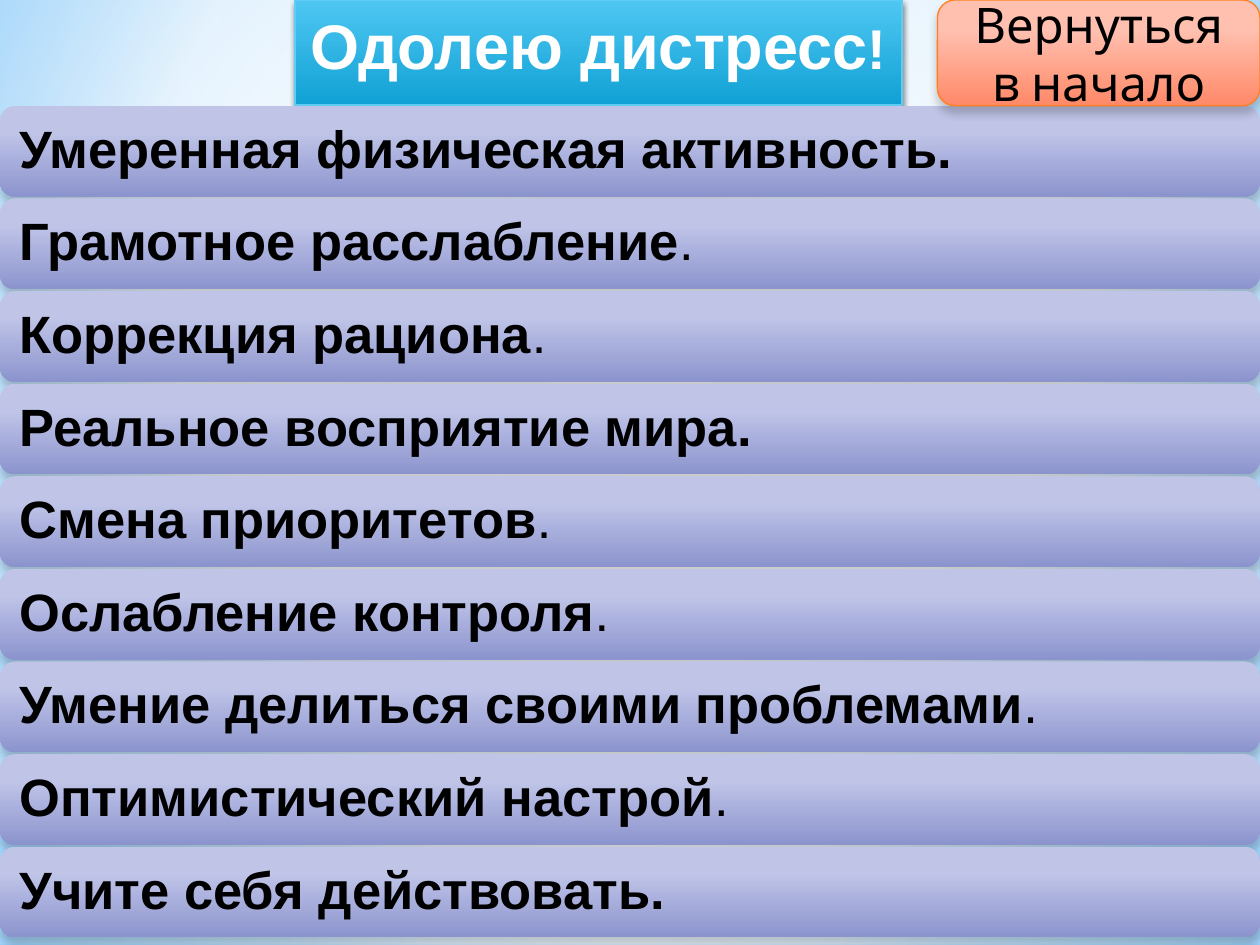
from dataclasses import dataclass
from typing import Optional

from lxml.etree import SubElement
from pptx import Presentation
from pptx.dml.color import RGBColor
from pptx.enum.shapes import MSO_SHAPE as Shape
from pptx.enum.text import MSO_ANCHOR as Anchor, MSO_AUTO_SIZE as AutoSize, PP_ALIGN as Align
from pptx.oxml import parse_xml
from pptx.oxml.ns import nsdecls, qn
from pptx.util import Inches, Pt


@dataclass(frozen=True)
class Stop:
    position: int
    color: str
    opacity: int = 100


@dataclass(frozen=True)
class Gradient:
    """Stops run downwards, or around the focus (left, top, right, bottom percent)."""
    stops: tuple[Stop, ...]
    focus: Optional[tuple[int, int, int, int]] = None


@dataclass(frozen=True)
class Shadow:
    opacity: int
    blur: float
    distance: float


@dataclass(frozen=True)
class Box:
    left: float
    top: float
    width: float
    height: float


@dataclass(frozen=True)
class Panel:
    kind: Shape
    box: Box
    gradient: Gradient


CENTER = (50, 50, 50, 50)
WHITE, PALE = "FFFFFF", "B4DCFA"
SKY = Gradient((Stop(0, "9ED5FF"), Stop(60, WHITE), Stop(100, "5BB9FF")), (20, 10, 20, 60))
PANELS = [
    Panel(Shape.RECTANGLE, Box(0, 5.58, 10, 1.92), Gradient(
        (Stop(0, WHITE, 91), Stop(37, WHITE, 76), Stop(100, PALE, 79)), CENTER)),
    Panel(Shape.RECTANGLE, Box(0, 0, 10, 5.58), Gradient(
        (Stop(0, WHITE, 89), Stop(48, WHITE, 62), Stop(100, PALE, 79)), CENTER)),
    Panel(Shape.RECTANGLE, Box(0, 4.12, 10, 2.5), Gradient(
        (Stop(0, WHITE, 0), Stop(29, WHITE, 30), Stop(45, PALE, 40),
         Stop(55, WHITE, 26), Stop(65, PALE, 60), Stop(100, WHITE, 0)))),
    Panel(Shape.OVAL, Box(0, 1.75, 10, 5.58), Gradient(
        (Stop(0, WHITE), Stop(56, WHITE, 0)), CENTER)),
]
TITLE_FILL = Gradient((Stop(0, "4EC7F2"), Stop(100, "11A1D4")))
BAR_FILL = Gradient((Stop(28, "C0C5E8"), Stop(100, "8C94CE")))
BUTTON_FILL = Gradient((Stop(28, "FFC0AF"), Stop(100, "FF8968")))
TITLE_SHADOW = Shadow(45, 3.1, 1.8)
SOFT_SHADOW = Shadow(20, 5, 4)

# Each tip: bold words, then a regular ending.
TIPS = [
    ("Умеренная физическая активность.", ""),
    ("Грамотное расслабление", "."),
    ("Коррекция рациона", "."),
    ("Реальное восприятие мира.", ""),
    ("Смена приоритетов", "."),
    ("Ослабление контроля", "."),
    ("Умение делиться своими проблемами", "."),
    ("Оптимистический настрой", "."),
    ("Учите себя действовать.", ""),
]
FIRST_BAR_TOP, LAST_BAR_TOP, BAR_HEIGHT = 0.84, 6.72, 0.72


def rgb(color: str) -> RGBColor:
    return RGBColor.from_string(color)


def set_gradient(fill, properties, gradient: Gradient) -> None:
    fill.solid()
    element = parse_xml(f'<a:gradFill rotWithShape="1" {nsdecls("a")}/>')
    stop_list = SubElement(element, qn("a:gsLst"))
    for stop in gradient.stops:
        node = SubElement(stop_list, qn("a:gs"), pos=str(stop.position * 1000))
        color = SubElement(node, qn("a:srgbClr"), val=stop.color)
        if stop.opacity < 100:
            SubElement(color, qn("a:alpha"), val=str(stop.opacity * 1000))
    if gradient.focus:
        circle = SubElement(element, qn("a:path"), path="circle")
        sides = {side: str(value * 1000) for side, value in zip("ltrb", gradient.focus)}
        SubElement(circle, qn("a:fillToRect"), **sides)
    else:
        SubElement(element, qn("a:lin"), ang="5400000", scaled="0")
    properties.replace(properties.find(qn("a:solidFill")), element)


def style_shape(shape, gradient: Gradient, line: Optional[str] = None,
                shadow: Optional[Shadow] = None) -> None:
    properties = shape._element.spPr
    set_gradient(shape.fill, properties, gradient)
    if line:
        shape.line.color.rgb = rgb(line)
        shape.line.width = Pt(0.75)
    else:
        shape.line.fill.background()
    effects = properties.find(qn("a:effectLst"))
    if effects is None:
        effects = SubElement(properties, qn("a:effectLst"))
    if shadow:
        outer = SubElement(effects, qn("a:outerShdw"), blurRad=str(Pt(shadow.blur)),
                           dist=str(Pt(shadow.distance)), dir="5400000", rotWithShape="0")
        color = SubElement(outer, qn("a:srgbClr"), val="000000")
        SubElement(color, qn("a:alpha"), val=str(shadow.opacity * 1000))


def place(shape, box: Box) -> None:
    shape.left, shape.top = Inches(box.left), Inches(box.top)
    shape.width, shape.height = Inches(box.width), Inches(box.height)


def add_shape(slide, kind: Shape, box: Box):
    shape = slide.shapes.add_shape(kind, 0, 0, 0, 0)
    place(shape, box)
    shape.shadow.inherit = False
    return shape


def add_run(paragraph, text: str, size: float, color: str = "000000",
            bold: bool = False, font: str = "Arial") -> None:
    run = paragraph.add_run()
    run.text = text
    run.font.name, run.font.size, run.font.bold = font, Pt(size), bold
    run.font.color.rgb = rgb(color)


def format_title(slide) -> None:
    title = slide.shapes.title
    slide.shapes._spTree.append(title._element)  # in front of the background panels
    place(title, Box(2.34, 0, 4.82, 0.71))
    style_shape(title, TITLE_FILL, "5ECCF3", TITLE_SHADOW)
    frame = title.text_frame
    frame.word_wrap = False
    frame.auto_size = AutoSize.SHAPE_TO_FIT_TEXT
    frame.vertical_anchor = Anchor.TOP
    paragraph = frame.paragraphs[0]
    paragraph.alignment = Align.CENTER
    add_run(paragraph, "Одолею дистресс", 36, WHITE, bold=True)
    add_run(paragraph, "!", 32, WHITE, bold=True)


def add_tip(slide, top: float, words: str, ending: str) -> None:
    bar = add_shape(slide, Shape.ROUNDED_RECTANGLE, Box(0, top, 10, BAR_HEIGHT))
    style_shape(bar, BAR_FILL, shadow=SOFT_SHADOW)
    frame = bar.text_frame
    frame.margin_left = frame.margin_right = Inches(0.12)
    frame.vertical_anchor = Anchor.MIDDLE
    paragraph = frame.paragraphs[0]
    paragraph.alignment = Align.LEFT
    paragraph.line_spacing = 0.9
    add_run(paragraph, words, 30, bold=True)
    if ending:
        add_run(paragraph, ending, 30)


def add_return_button(slide) -> None:
    button = add_shape(slide, Shape.ROUNDED_RECTANGLE, Box(7.44, 0, 2.56, 0.84))
    style_shape(button, BUTTON_FILL, "FF8021", SOFT_SHADOW)
    button.text_frame.vertical_anchor = Anchor.MIDDLE
    paragraph = button.text_frame.paragraphs[0]
    paragraph.alignment = Align.CENTER
    add_run(paragraph, "Вернуться в начало", 28, font="Cabin")


def main() -> None:
    presentation = Presentation()
    presentation.slide_width, presentation.slide_height = Inches(10), Inches(7.5)
    slide = presentation.slides.add_slide(presentation.slide_layouts.get_by_name("Title Only"))
    background_fill = slide.background.fill
    background_fill.solid()
    set_gradient(background_fill, slide._element.find(".//" + qn("p:bgPr")), SKY)
    for panel in PANELS:
        style_shape(add_shape(slide, panel.kind, panel.box), panel.gradient)
    format_title(slide)
    pitch = (LAST_BAR_TOP - FIRST_BAR_TOP) / (len(TIPS) - 1)
    for index, (words, ending) in enumerate(TIPS):
        add_tip(slide, FIRST_BAR_TOP + index * pitch, words, ending)
    add_return_button(slide)
    presentation.save("out.pptx")


if __name__ == "__main__":
    main()
